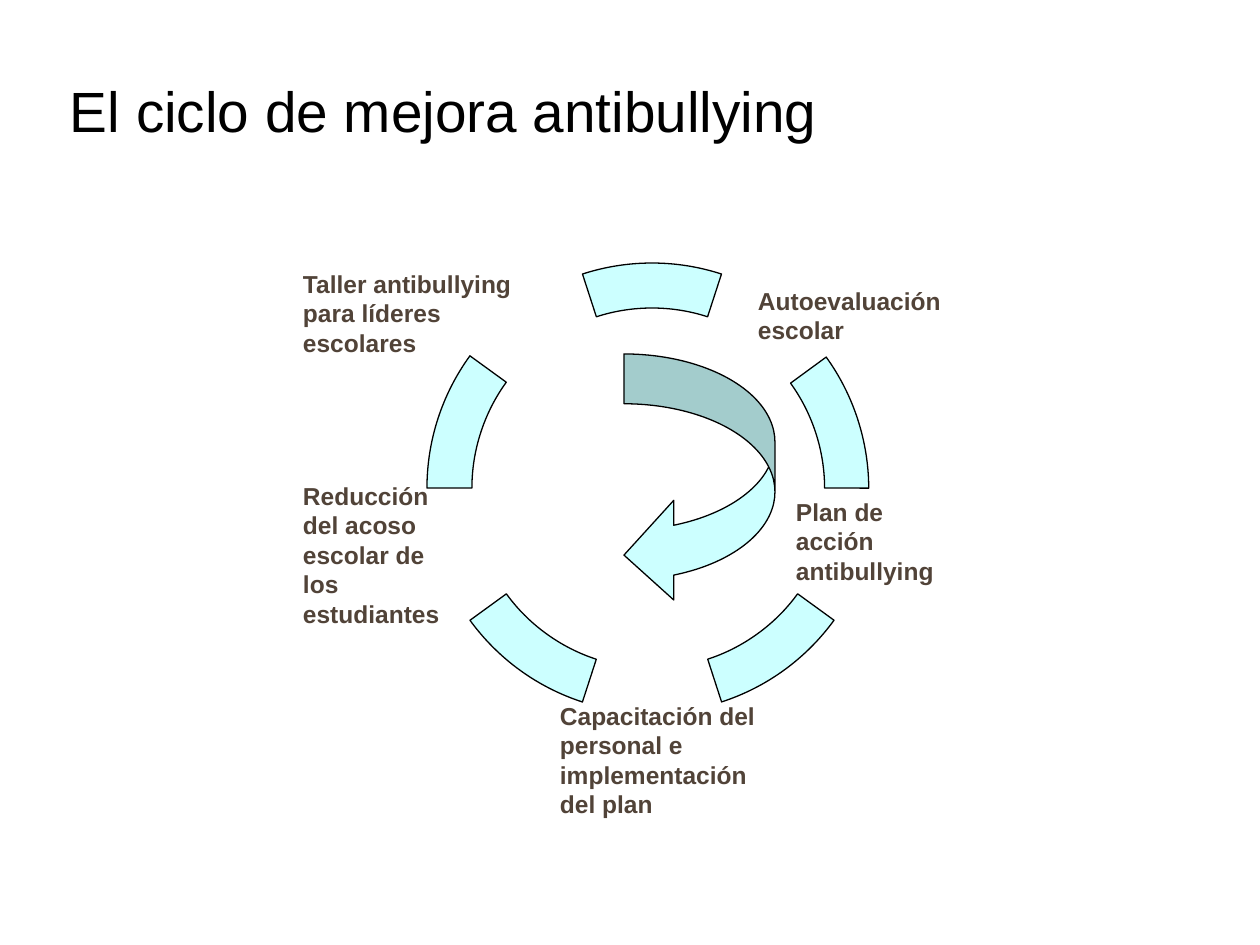
import math

import lxml.etree
import pptx
import pptx.dml.color
import pptx.enum.shapes
import pptx.enum.text
import pptx.oxml.ns
import pptx.util

PX = 914400 / 126
FONT = "Arial"
PALE_CYAN = "CCFFFF"
BLACK = "000000"
BROWN = "514338"
RING_BOX = (427, 263, 450, 450)
SQUEEZED_BOX = (425, 267, 446, 441)
UNIT = 10000
INNER_RATIO = 0.8
HALF_ANGLE = 18
LINE_HEIGHT = 29
LABELS = [
    ("Autoevaluación escolar", 749, 281, 208, 2),
    ("Capacitación del personal e implementación del plan", 551, 696, 237, 4),
    ("Taller antibullying para líderes escolares", 294, 264, 257, 3),
    ("Plan de acción antibullying", 787, 492, 161, 3),
    ("Reducción del acoso escolar de los estudiantes", 294, 476, 168, 5),
]


def px(length):
    """Turn pixels into EMU."""
    return pptx.util.Emu(round(length * PX))


def color(value):
    """Turn a hex string into a colour."""
    return pptx.dml.color.RGBColor.from_string(value)


def style_shape(shape):
    """Give a shape the pale fill and thin black outline of the cycle."""
    shape.shadow.inherit = False
    shape.fill.solid()
    shape.fill.fore_color.rgb = color(PALE_CYAN)
    shape.line.color.rgb = color(BLACK)
    shape.line.width = pptx.util.Pt(0.75)


def add_text(page, text, left, top, width, height, size, ink, bold, insets):
    """Add a wrapped text box anchored at its top."""
    box = page.shapes.add_textbox(px(left), px(top), px(width), px(height))
    frame = box.text_frame
    frame.word_wrap = True
    frame.vertical_anchor = pptx.enum.text.MSO_ANCHOR.TOP
    side, upright = insets
    frame.margin_left = frame.margin_right = px(side)
    frame.margin_top = frame.margin_bottom = px(upright)
    para = frame.paragraphs[0]
    para.text = text
    para.alignment = pptx.enum.text.PP_ALIGN.LEFT
    para.font.name = FONT
    para.font.size = pptx.util.Pt(size)
    para.font.bold = bold
    para.font.color.rgb = color(ink)


def ring_point(radius, angle, lead=0):
    """Find a ring point clockwise from the top, moved by lead along its tangent."""
    turn = math.radians(angle)
    x = radius * (math.sin(turn) + lead * math.cos(turn))
    y = radius * (lead * math.sin(turn) - math.cos(turn))
    return round(UNIT * (1 + x) / 2), round(UNIT * (1 + y) / 2)


def curve_points(radius, start, end):
    """List the control points and end of one Bezier arc."""
    lead = 4 / 3 * math.tan(math.radians(end - start) / 4)
    return [
        ring_point(radius, start, lead),
        ring_point(radius, end, -lead),
        ring_point(radius, end),
    ]


def add_step(outline, name, points=()):
    """Append one drawing step to an outline."""
    step = lxml.etree.SubElement(outline, pptx.oxml.ns.qn(name))
    for x, y in points:
        lxml.etree.SubElement(step, pptx.oxml.ns.qn("a:pt"), x=str(x), y=str(y))


def add_ring_segment(page, left, top, width, height, rotation):
    """Add a top segment of the ring, turned about the centre of the ring."""
    builder = page.shapes.build_freeform()
    builder.add_line_segments([(UNIT, 0), (UNIT, UNIT)])
    segment = builder.convert_to_shape()
    outline = segment._element.xpath(".//a:path")[0]
    for step in list(outline):
        outline.remove(step)
    outline.set("w", str(UNIT))
    outline.set("h", str(UNIT))
    add_step(outline, "a:moveTo", [ring_point(INNER_RATIO, -HALF_ANGLE)])
    add_step(outline, "a:cubicBezTo", curve_points(INNER_RATIO, -HALF_ANGLE, 0))
    add_step(outline, "a:cubicBezTo", curve_points(INNER_RATIO, 0, HALF_ANGLE))
    add_step(outline, "a:lnTo", [ring_point(1, HALF_ANGLE)])
    add_step(outline, "a:cubicBezTo", curve_points(1, HALF_ANGLE, 0))
    add_step(outline, "a:cubicBezTo", curve_points(1, 0, -HALF_ANGLE))
    add_step(outline, "a:close")
    segment.left, segment.top = px(left), px(top)
    segment.width, segment.height = px(width), px(height)
    segment.rotation = rotation
    style_shape(segment)


def add_turn_arrow(page, left, top, width, height):
    """Add the curved arrow inside the ring."""
    kind = pptx.enum.shapes.MSO_SHAPE.CURVED_LEFT_ARROW
    arrow = page.shapes.add_shape(kind, px(left), px(top), px(width), px(height))
    for index, value in enumerate((0.33, 0.66, 0.33)):
        arrow.adjustments[index] = value
    style_shape(arrow)


def main():
    """Build the improvement cycle slide."""
    deck = pptx.Presentation()
    deck.slide_width, deck.slide_height = px(1260), px(945)
    page = deck.slides.add_slide(deck.slide_layouts[6])
    add_text(page, "El ciclo de mejora antibullying", 57, 64, 1134, 158,
             32.4, BLACK, False, (13, 12))
    for index in range(5):
        box = SQUEEZED_BOX if index == 1 else RING_BOX
        add_ring_segment(page, *box, index * 72)
    for text, left, top, width, lines in LABELS:
        add_text(page, text, left, top, width, lines * LINE_HEIGHT + 10,
                 14, BROWN, True, (9, 5))
    add_turn_arrow(page, 624, 354, 151, 251)
    deck.save("out.pptx")


if __name__ == "__main__":
    main()
